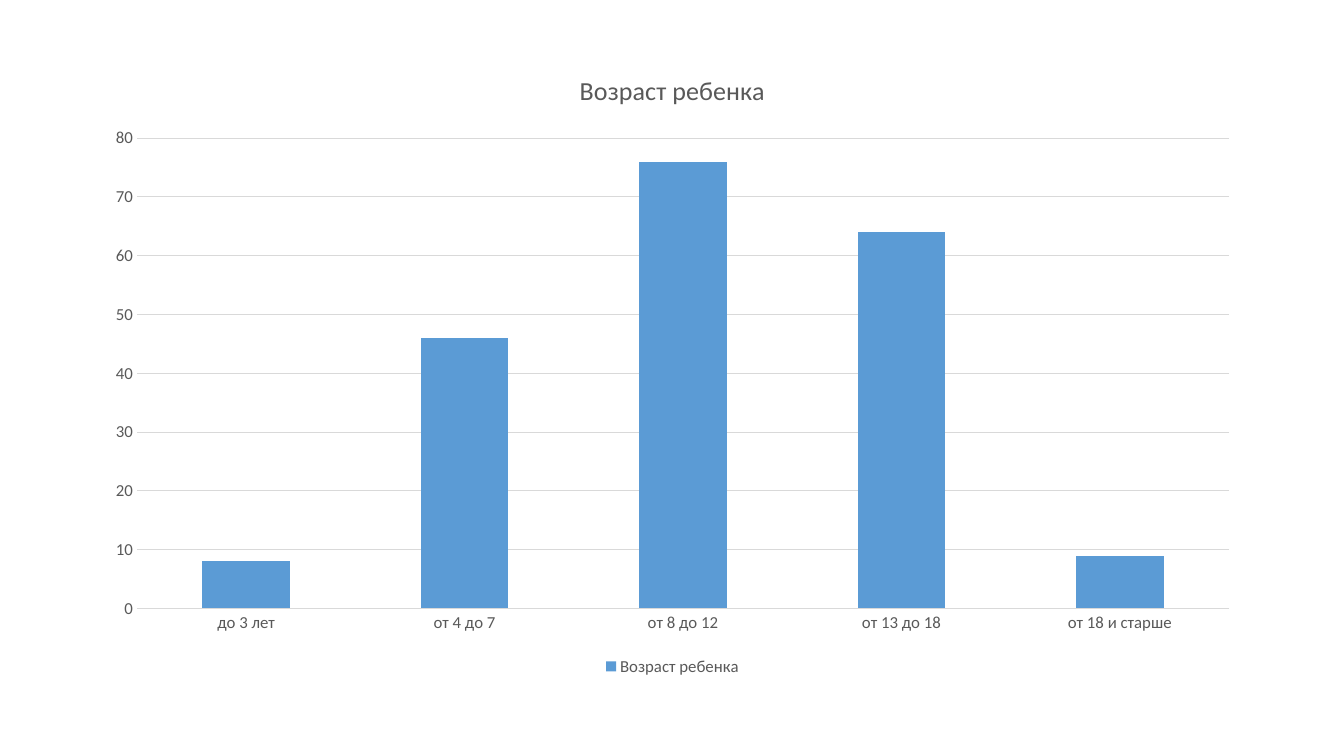
from pptx import Presentation
from pptx.chart.data import CategoryChartData
from pptx.dml.color import RGBColor
from pptx.enum.chart import XL_CHART_TYPE, XL_LEGEND_POSITION, XL_TICK_MARK
from pptx.util import Inches, Pt

STACKED = XL_CHART_TYPE.COLUMN_STACKED
BOTTOM = XL_LEGEND_POSITION.BOTTOM
NO_TICK = XL_TICK_MARK.NONE

BLUE = RGBColor(0x5B, 0x9B, 0xD5)
TEXT_GREY = RGBColor(0x59, 0x59, 0x59)
LINE_GREY = RGBColor(0xD9, 0xD9, 0xD9)
FONT = "Calibri"
TITLE = "Возраст ребенка"
CHILDREN_BY_AGE = {
    "до 3 лет": 8,
    "от 4 до 7": 46,
    "от 8 до 12": 76,
    "от 13 до 18": 64,
    "от 18 и старше": 9,
}


def style_font(font, size):
    font.name = FONT
    font.size = Pt(size)
    font.bold = False
    font.color.rgb = TEXT_GREY


prs = Presentation()
prs.slide_width = Inches(13.33)
prs.slide_height = Inches(7.5)
slide = prs.slides.add_slide(prs.slide_layouts[6])

data = CategoryChartData()
data.categories = list(CHILDREN_BY_AGE)
data.add_series(TITLE, list(CHILDREN_BY_AGE.values()))
chart = slide.shapes.add_chart(
    STACKED, Inches(0.92), Inches(0.49), Inches(11.5), Inches(6.26), data
).chart
style_font(chart.font, 12)

# Title and legend
chart.has_title = True
tf = chart.chart_title.text_frame
tf.text = TITLE
style_font(tf.paragraphs[0].runs[0].font, 18.6)
chart.chart_title.include_in_layout = False

chart.has_legend = True
chart.legend.position = BOTTOM
chart.legend.include_in_layout = False
style_font(chart.legend.font, 12)

# Columns
plot = chart.plots[0]
plot.vary_by_categories = False
plot.gap_width = 150
plot.overlap = 100
fill = plot.series[0].format.fill
fill.solid()
fill.fore_color.rgb = BLUE

# Axes
ages, counts = chart.category_axis, chart.value_axis
for axis in (ages, counts):
    axis.major_tick_mark = NO_TICK
    axis.minor_tick_mark = NO_TICK
    style_font(axis.tick_labels.font, 12)

counts.minimum_scale = 0
counts.maximum_scale = 80
counts.major_unit = 10
counts.has_major_gridlines = True
counts.format.line.fill.background()
for line in (ages.format.line, counts.major_gridlines.format.line):
    line.color.rgb = LINE_GREY
    line.width = Pt(0.75)

prs.save("out.pptx")
